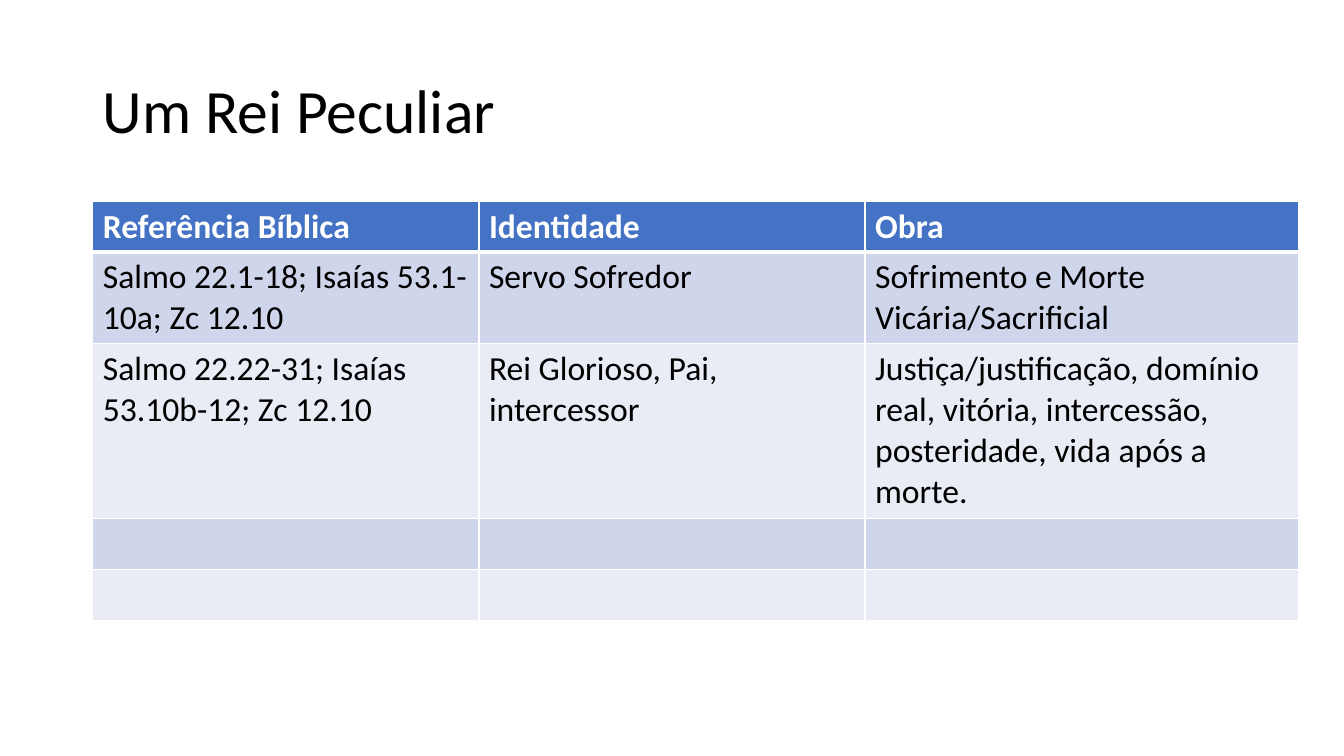
from lxml.etree import SubElement
from pptx import Presentation
from pptx.dml.color import RGBColor
from pptx.enum.text import MSO_ANCHOR
from pptx.oxml.ns import qn
from pptx.util import Inches, Pt

TITLE = "Um Rei Peculiar"
HEADER = ("Referência Bíblica", "Identidade", "Obra")
BODY = [
    ("Salmo 22.1-18; Isaías 53.1-10a; Zc 12.10",
     "Servo Sofredor",
     "Sofrimento e Morte Vicária/Sacrificial"),
    ("Salmo 22.22-31; Isaías 53.10b-12; Zc 12.10",
     "Rei Glorioso, Pai, intercessor",
     "Justiça/justificação, domínio real, vitória, intercessão, "
     "posteridade, vida após a morte."),
    ("", "", ""),
    ("", "", ""),
]
COLUMN_WIDTHS = (3.83, 3.83, 4.3)
ROW_HEIGHTS = (0.5, 0.91, 1.73, 0.51, 0.51)
HEADER_FILL = "4472C4"
BAND_FILLS = ("CFD5EA", "E9EBF5")
WHITE, BLACK = "FFFFFF", "000000"
LEFT = 0.92


def color(value):
    return RGBColor.from_string(value)


def add_text(frame, text, size, ink, bold=False):
    run = frame.paragraphs[0].add_run()
    run.text = text
    run.font.name = "Calibri"
    run.font.size = Pt(size)
    run.font.bold = bold
    run.font.color.rgb = color(ink)


def add_borders(cell, widths):
    properties = cell._tc.get_or_add_tcPr()
    for side, width in widths.items():
        border = SubElement(properties, qn(f"a:ln{side}"), w=str(Pt(width)))
        fill = SubElement(border, qn("a:solidFill"))
        SubElement(fill, qn("a:srgbClr"), val=WHITE)


def add_title(slide):
    title = slide.shapes.add_textbox(
        Inches(LEFT), Inches(0.4), Inches(11.5), Inches(1.45))
    frame = title.text_frame
    frame.word_wrap = True
    frame.vertical_anchor = MSO_ANCHOR.MIDDLE
    frame.paragraphs[0].line_spacing = 0.9
    add_text(frame, TITLE, 44, BLACK)


def add_references(slide):
    rows = [HEADER, *BODY]
    references = slide.shapes.add_table(
        len(rows), len(HEADER), Inches(LEFT), Inches(2),
        Inches(sum(COLUMN_WIDTHS)), Inches(sum(ROW_HEIGHTS))).table
    for column, width in zip(references.columns, COLUMN_WIDTHS):
        column.width = Inches(width)
    for row, height in zip(references.rows, ROW_HEIGHTS):
        row.height = Inches(height)
    for r, texts in enumerate(rows):
        is_header = r == 0
        fill = HEADER_FILL if is_header else BAND_FILLS[(r - 1) % 2]
        widths = {"L": 1, "R": 1, "T": 3 if r == 1 else 1,
                  "B": 3 if is_header else 1}
        for c, text in enumerate(texts):
            cell = references.cell(r, c)
            add_borders(cell, widths)
            cell.fill.solid()
            cell.fill.fore_color.rgb = color(fill)
            if text:
                add_text(cell.text_frame, text, 24,
                         WHITE if is_header else BLACK, is_header)


def main():
    deck = Presentation()
    deck.slide_width, deck.slide_height = Inches(13.33), Inches(7.5)
    slide = deck.slides.add_slide(deck.slide_layouts[6])
    add_title(slide)
    add_references(slide)
    deck.save("out.pptx")


if __name__ == "__main__":
    main()
